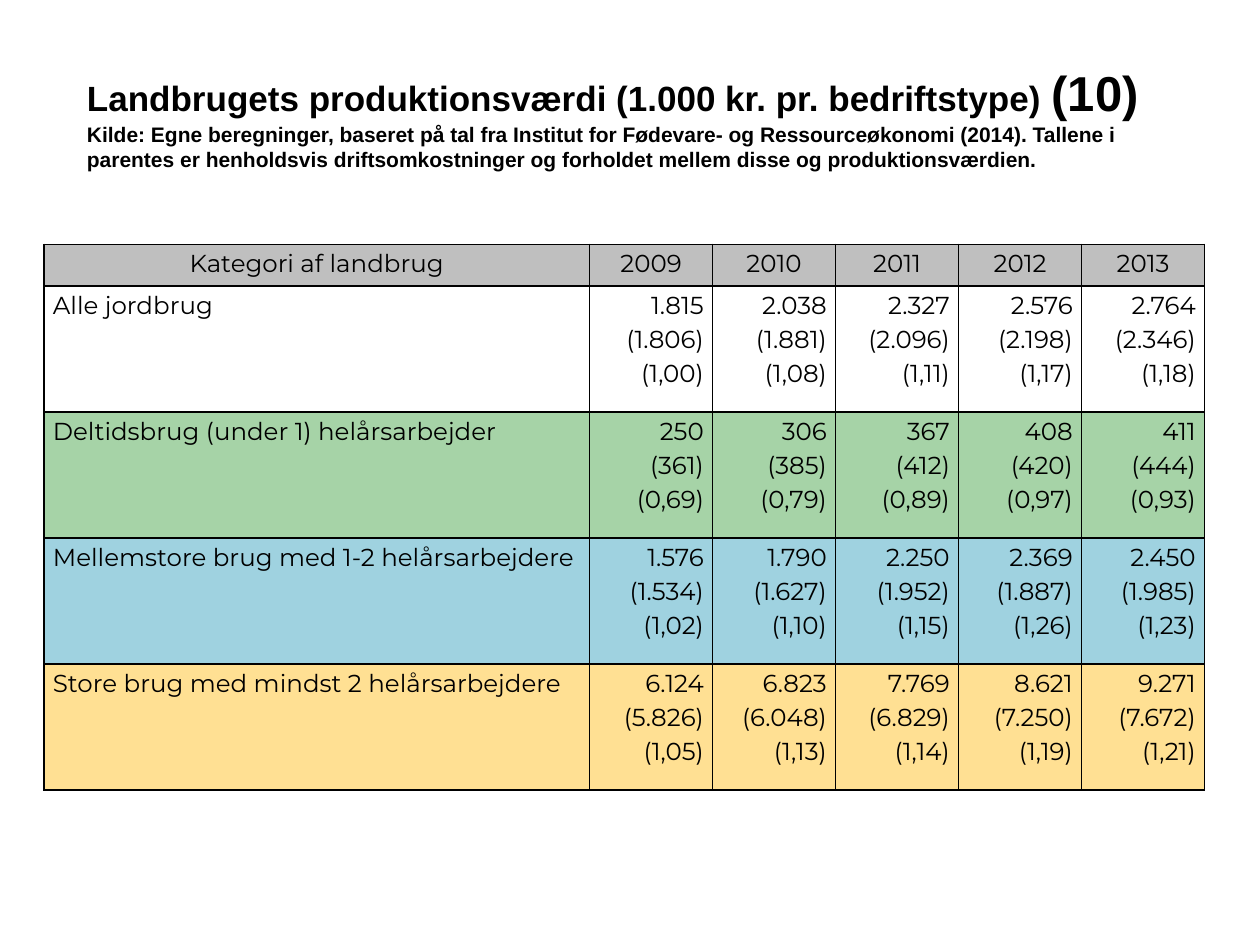
from lxml import etree
from pptx import Presentation
from pptx.dml.color import RGBColor
from pptx.enum.text import MSO_ANCHOR, MSO_AUTO_SIZE, PP_ALIGN
from pptx.oxml.ns import qn
from pptx.util import Inches, Pt

LEFT, CENTER, RIGHT = PP_ALIGN.LEFT, PP_ALIGN.CENTER, PP_ALIGN.RIGHT

COLORS = {
    "text": "000000",
    "border": "000000",
    "header": "BFBFBF",
    "all": "FFFFFF",
    "part_time": "A6D3A7",
    "medium": "9FD2E0",
    "large": "FFE093",
}

# Each title line is a list of (text, size in points)
TITLE_LINES = [
    [("Landbrugets produktionsværdi (1.000 kr. pr. bedriftstype) ", 20), ("(10)", 28)],
    [("Kilde: Egne beregninger, baseret på tal fra Institut for Fødevare- og "
      "Ressourceøkonomi (2014). Tallene i parentes er henholdsvis driftsomkostninger "
      "og forholdet mellem disse og produktionsværdien.", 12)],
]

HEADER = ["Kategori af landbrug", "2009", "2010", "2011", "2012", "2013"]

# Category, color, then production value, operating costs and their ratio per year
CATEGORIES = [
    ("Alle jordbrug", "all", [
        ("1.815", "1.806", "1,00"), ("2.038", "1.881", "1,08"), ("2.327", "2.096", "1,11"),
        ("2.576", "2.198", "1,17"), ("2.764", "2.346", "1,18")]),
    ("Deltidsbrug (under 1) helårsarbejder", "part_time", [
        ("250", "361", "0,69"), ("306", "385", "0,79"), ("367", "412", "0,89"),
        ("408", "420", "0,97"), ("411", "444", "0,93")]),
    ("Mellemstore brug med 1-2 helårsarbejdere", "medium", [
        ("1.576", "1.534", "1,02"), ("1.790", "1.627", "1,10"), ("2.250", "1.952", "1,15"),
        ("2.369", "1.887", "1,26"), ("2.450", "1.985", "1,23")]),
    ("Store brug med mindst 2 helårsarbejdere", "large", [
        ("6.124", "5.826", "1,05"), ("6.823", "6.048", "1,13"), ("7.769", "6.829", "1,14"),
        ("8.621", "7.250", "1,19"), ("9.271", "7.672", "1,21")]),
]

CATEGORY_WIDTH, YEAR_WIDTH = 4.33, 0.976
HEADER_HEIGHT, CATEGORY_HEIGHT = 0.33, 1


def rgb(name):
    return RGBColor.from_string(COLORS[name])


def style_run(run, font, size, bold=False):
    run.font.name = font
    run.font.size = Pt(size)
    run.font.bold = bold
    run.font.color.rgb = rgb("text")


def add_borders(cell):
    """Draw a 1 pt line on all four sides; call before the cell is filled."""
    properties = cell._tc.get_or_add_tcPr()
    for side in ("lnL", "lnR", "lnT", "lnB"):
        line = etree.SubElement(properties, qn(f"a:{side}"), w=str(Pt(1)))
        fill = etree.SubElement(line, qn("a:solidFill"))
        etree.SubElement(fill, qn("a:srgbClr"), val=COLORS["border"])


def fill_cell(cell, text, color, alignment):
    cell.margin_left = cell.margin_right = Inches(0.07)
    cell.margin_top = cell.margin_bottom = 0
    add_borders(cell)
    cell.fill.solid()
    cell.fill.fore_color.rgb = rgb(color)
    cell.text_frame.text = text
    for paragraph in cell.text_frame.paragraphs:
        paragraph.alignment = alignment
        paragraph.line_spacing = 1.15
        for run in paragraph.runs:
            style_run(run, "Montserrat", 14)


def add_title(slide):
    title = slide.shapes.title
    title.left, title.top = Inches(0.59), Inches(0.44)
    title.width, title.height = Inches(8.74), Inches(0.98)
    frame = title.text_frame
    frame.word_wrap = True
    frame.auto_size = MSO_AUTO_SIZE.NONE
    frame.vertical_anchor = MSO_ANCHOR.MIDDLE
    for index, line in enumerate(TITLE_LINES):
        paragraph = frame.add_paragraph() if index else frame.paragraphs[0]
        paragraph.alignment = LEFT
        for text, size in line:
            run = paragraph.add_run()
            run.text = text
            style_run(run, "Arial", size, bold=True)


def add_production_table(slide):
    widths = [CATEGORY_WIDTH] + [YEAR_WIDTH] * (len(HEADER) - 1)
    heights = [HEADER_HEIGHT] + [CATEGORY_HEIGHT] * len(CATEGORIES)
    table = slide.shapes.add_table(
        len(heights), len(widths), Inches(0.35), Inches(1.94),
        Inches(sum(widths)), Inches(sum(heights))).table
    for column, width in zip(table.columns, widths):
        column.width = Inches(width)
    for row, height in zip(table.rows, heights):
        row.height = Inches(height)

    for column, heading in enumerate(HEADER):
        fill_cell(table.cell(0, column), heading, "header", CENTER)
    for row, (category, color, years) in enumerate(CATEGORIES, start=1):
        fill_cell(table.cell(row, 0), category, color, LEFT)
        for column, (value, costs, ratio) in enumerate(years, start=1):
            figures = f"{value}\n({costs})\n({ratio})"
            fill_cell(table.cell(row, column), figures, color, RIGHT)


def main():
    presentation = Presentation()
    presentation.slide_width, presentation.slide_height = Inches(10), Inches(7.5)
    slide = presentation.slides.add_slide(presentation.slide_layouts.get_by_name("Title Only"))
    add_production_table(slide)
    add_title(slide)
    presentation.save("out.pptx")


if __name__ == "__main__":
    main()
